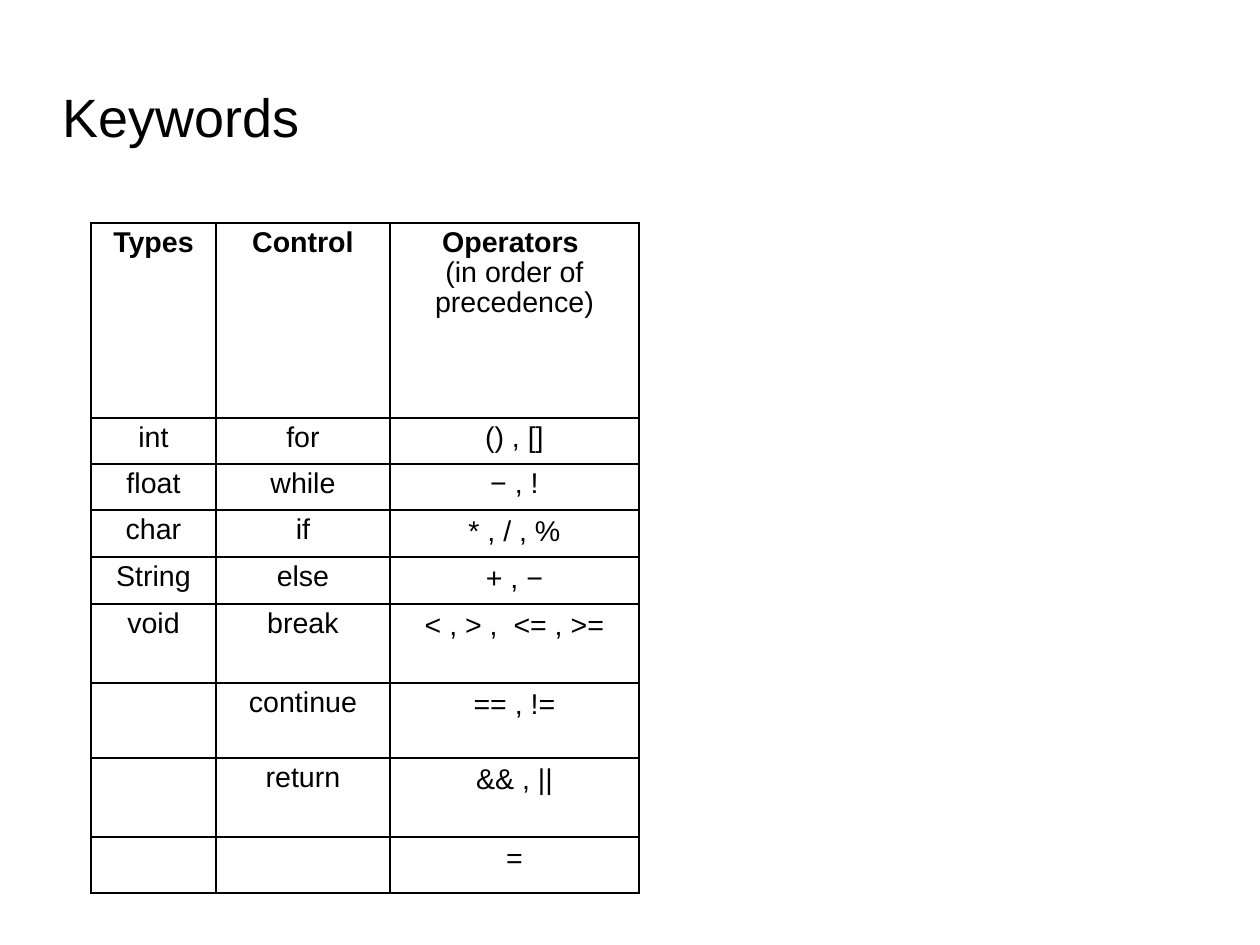
from lxml import etree
from pptx import Presentation
from pptx import util as u
from pptx.dml.color import RGBColor
from pptx.enum import text
from pptx.oxml import ns

EMU_PER_PX = 8000
FONT = "Arial"
BLACK = "000000"
COLUMN_WIDTHS = [125, 174, 249]
ROW_HEIGHTS = [195, 46, 46, 47, 47, 79, 75, 79, 56]
HEADINGS = ["Types", "Control", "Operators \n(in order of precedence)"]
TYPES = ["int", "float", "char", "String", "void"]
CONTROLS = ["for", "while", "if", "else", "break", "continue", "return"]
OPERATORS = ["() , []", "− , !", "* , / , %", "+ , −", "< , > ,  <= , >=",
             "== , !=", "&& , ||", "="]
FIRST_LOOSE_OPERATOR_ROW = 3


def px(length):
    return u.Emu(length * EMU_PER_PX)


def color(value):
    return RGBColor.from_string(value)


def format_paragraph(paragraph, size, alignment, spacing=0.94, bold=False):
    paragraph.alignment = alignment
    paragraph.line_spacing = spacing
    font = paragraph.font
    font.name = FONT
    font.size = u.Pt(size)
    font.bold = bold
    font.color.rgb = color(BLACK)


def add_title(slide, left, top, width, height):
    title = slide.shapes.title
    title.left, title.top, title.width, title.height = map(px, (left, top, width, height))
    frame = title.text_frame
    frame.text = "Keywords"
    frame.word_wrap = True
    frame.auto_size = text.MSO_AUTO_SIZE.NONE
    frame.vertical_anchor = text.MSO_ANCHOR.MIDDLE
    frame.margin_left = frame.margin_right = frame.margin_bottom = 0
    frame.margin_top = px(5)
    format_paragraph(frame.paragraphs[0], 34, text.PP_ALIGN.LEFT)


def add_borders(cell):
    properties = cell._tc.get_or_add_tcPr()
    for position, side in enumerate(("lnL", "lnR", "lnT", "lnB")):
        line = etree.Element(ns.qn(f"a:{side}"), w=str(u.Pt(1)))
        fill = etree.SubElement(line, ns.qn("a:solidFill"))
        etree.SubElement(fill, ns.qn("a:srgbClr"), val=BLACK)
        properties.insert(position, line)


def add_keyword_table(slide, left, top):
    frame = slide.shapes.add_table(
        len(ROW_HEIGHTS), len(COLUMN_WIDTHS), px(left), px(top),
        px(sum(COLUMN_WIDTHS)), px(sum(ROW_HEIGHTS)))
    table = frame.table
    table.first_row = table.horz_banding = False
    for column, width in zip(table.columns, COLUMN_WIDTHS):
        column.width = px(width)
    for row, height in zip(table.rows, ROW_HEIGHTS):
        row.height = px(height)
    for cell in table.iter_cells():
        cell.fill.background()
        add_borders(cell)
    for column, words in enumerate((TYPES, CONTROLS, OPERATORS)):
        for row, words_in_cell in enumerate([HEADINGS[column], *words]):
            cell = table.cell(row, column)
            cell.text = words_in_cell
            loose = words is OPERATORS and row >= FIRST_LOOSE_OPERATOR_ROW
            for index, paragraph in enumerate(cell.text_frame.paragraphs):
                format_paragraph(paragraph, 18, text.PP_ALIGN.CENTER,
                                 1.0 if loose else 0.94, row == 0 and index == 0)


def main():
    presentation = Presentation()
    presentation.slide_width, presentation.slide_height = px(1260), px(945)
    slide = presentation.slides.add_slide(presentation.slide_layouts[5])
    add_title(slide, 63, 38, 1134, 158)
    add_keyword_table(slide, 91, 223)
    presentation.save("out.pptx")


if __name__ == "__main__":
    main()
